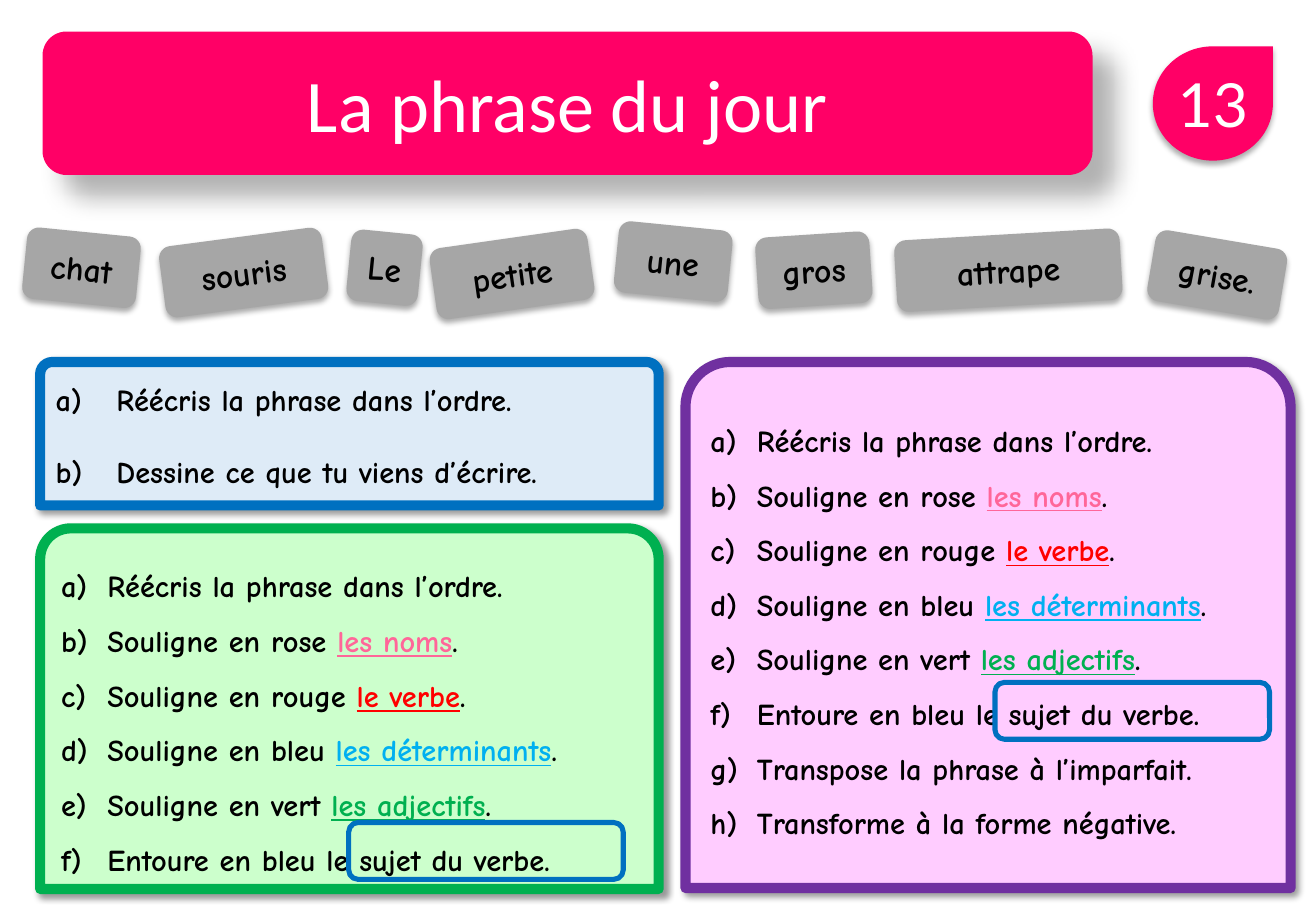
from lxml import etree
from pptx import Presentation
from pptx.dml.color import RGBColor
from pptx.enum import shapes, text
from pptx.oxml.ns import qn
from pptx.util import Cm, Pt

COLORS = {
    "black": "000000", "white": "FFFFFF", "banner": "FF0066", "card": "A6A6A6",
    "blue": "0070C0", "pale blue": "DEEBF7", "green": "00B050",
    "pale green": "CCFFCC", "purple": "7030A0", "pale purple": "FFCCFF",
    "pink": "FF6699", "red": "FF0000", "sky": "00B0F0",
}
HAND = "Comic Neue"

TITLE = "La phrase du jour"
TITLE_AREA = (0.89, 0.66, 21.95, 3)
NUMBER = "13"
NUMBER_AREA = (24.1, 0.97, 2.51, 2.39)

CARD_HEIGHT = 1.5
CARDS = [
    ("chat", 0.51, 4.85, 2.39, 5.7),
    ("souris", 3.38, 4.95, 3.43, -7.5),
    ("Le", 7.29, 4.85, 1.5, 5.7),
    ("petite", 9.04, 4.98, 3.33, -8.1),
    ("une", 12.88, 4.72, 2.39, 5.7),
    ("gros", 15.82, 4.9, 2.39, -3.7),
    ("attrape", 18.72, 4.9, 4.72, -3.3),
    ("grise.", 24.05, 5, 2.79, 9.6),
]

REWRITE = [("Réécris la phrase dans l’ordre.", "black")]
STEPS = [
    REWRITE,
    [("Souligne en rose ", "black"), ("les noms", "pink"), (".", "black")],
    [("Souligne en rouge ", "black"), ("le verbe", "red"), (".", "black")],
    [("Souligne en bleu ", "black"), ("les déterminants", "sky"), (".", "black")],
    [("Souligne en vert ", "black"), ("les adjectifs", "green"), (".", "black")],
    [("Entoure en bleu le sujet du verbe.", "black")],
    [("Transpose la phrase à l’imparfait.", "black")],
    [("Transforme à la forme négative.", "black")],
]
DRAWING = [REWRITE, [("Dessine ce que tu viens d’écrire.", "black")]]

# area, colour, steps, indent, first line spacing, line spacing, gap in points
PANELS = [
    ((14.33, 7.57, 12.65, 11), "purple", STEPS, 0.97, 1, 1.5, 0),
    ((0.84, 11.05, 12.93, 7.54), "green", STEPS[:6], 0.97, 1.5, 1.5, 0),
    ((0.84, 7.57, 12.93, 3), "blue", DRAWING, 1.27, 1, 1, 21.5),
]
SUBJECT_FRAMES = [(7.29, 17.2, 5.74, 1.19), (20.8, 14.27, 5.74, 1.19)]

PANEL_SHADOW = (40, 4, 3, 45)
BANNER_SHADOW = (30, 15, 18, 45)
CARD_SHADOW = (32, 3.5, 2.2, 90)


def color(name):
    return RGBColor.from_string(COLORS[name])


def add_box(kind, area, fill=None, line=None, width=0, shadow=None):
    box = slide.shapes.add_shape(kind, *map(Cm, area))
    box.shadow.inherit = False
    if fill:
        box.fill.solid()
        box.fill.fore_color.rgb = color(fill)
    else:
        box.fill.background()
    if line:
        box.line.color.rgb = color(line)
        box.line.width = Pt(width)
    else:
        box.line.fill.background()
    if shadow:
        opacity, blur, distance, angle = shadow
        effects = box._element.spPr.find(qn("a:effectLst"))
        outer = etree.SubElement(
            effects, qn("a:outerShdw"), blurRad=str(Pt(blur)),
            dist=str(Pt(distance)), dir=str(angle * 60000), rotWithShape="0")
        tint = etree.SubElement(outer, qn("a:srgbClr"), val=COLORS["black"])
        etree.SubElement(tint, qn("a:alpha"), val=str(opacity * 1000))
    return box


def format_span(span, font, size, ink, bold=False):
    span.font.name = font
    span.font.size = Pt(size)
    span.font.bold = bold
    span.font.color.rgb = color(ink)


def set_label(box, label, font, size, ink, bold=False):
    frame = box.text_frame
    frame.text = label
    frame.word_wrap = True
    frame.vertical_anchor = text.MSO_ANCHOR.MIDDLE
    frame.margin_left = frame.margin_right = 0
    para = frame.paragraphs[0]
    para.alignment = text.PP_ALIGN.CENTER
    format_span(para.runs[0], font, size, ink, bold)


def add_panel(area, hue, steps, indent, first_spacing, spacing, gap):
    box = add_box(shapes.MSO_SHAPE.ROUND_2_SAME_RECTANGLE, area,
                  "pale " + hue, hue, 6, PANEL_SHADOW)
    box.adjustments[0] = 0.085
    frame = box.text_frame
    frame.word_wrap = True
    frame.vertical_anchor = text.MSO_ANCHOR.MIDDLE
    for index, step in enumerate(steps):
        para = frame.add_paragraph() if index else frame.paragraphs[0]
        para.alignment = text.PP_ALIGN.LEFT
        para.line_spacing = float(spacing if index else first_spacing)
        para.space_before = Pt(gap if index else 0)
        properties = para._p.get_or_add_pPr()
        properties.set("marL", str(Cm(indent)))
        properties.set("indent", str(-Cm(indent)))
        etree.SubElement(properties, qn("a:buFont"), typeface="+mj-lt")
        etree.SubElement(properties, qn("a:buAutoNum"), type="alphaLcParenR")
        for words, ink in step:
            span = para.add_run()
            span.text = words
            format_span(span, HAND, 18, ink, True)
            span.font.underline = ink != "black"


deck = Presentation()
deck.slide_width, deck.slide_height = Cm(27.51), Cm(19.05)
slide = deck.slides.add_slide(deck.slide_layouts[5])

for panel in PANELS:
    add_panel(*panel)

banner = add_box(shapes.MSO_SHAPE.ROUNDED_RECTANGLE, TITLE_AREA, "banner",
                 shadow=BANNER_SHADOW)
title = slide.shapes.title
title.left, title.top, title.width, title.height = map(Cm, TITLE_AREA)
set_label(title, TITLE, "Calibri", 44, "white")
banner._element.addnext(title._element)

badge = add_box(shapes.MSO_SHAPE.TEAR, NUMBER_AREA, "banner", shadow=CARD_SHADOW)
set_label(badge, NUMBER, "Lato", 36, "white")

for word, left, top, width, angle in CARDS:
    card = add_box(shapes.MSO_SHAPE.ROUNDED_RECTANGLE,
                   (left, top, width, CARD_HEIGHT), "card", shadow=CARD_SHADOW)
    card.rotation = angle
    set_label(card, word, HAND, 20, "black", True)

for area in SUBJECT_FRAMES:
    add_box(shapes.MSO_SHAPE.ROUNDED_RECTANGLE, area, line="blue", width=3)

deck.save("out.pptx")
